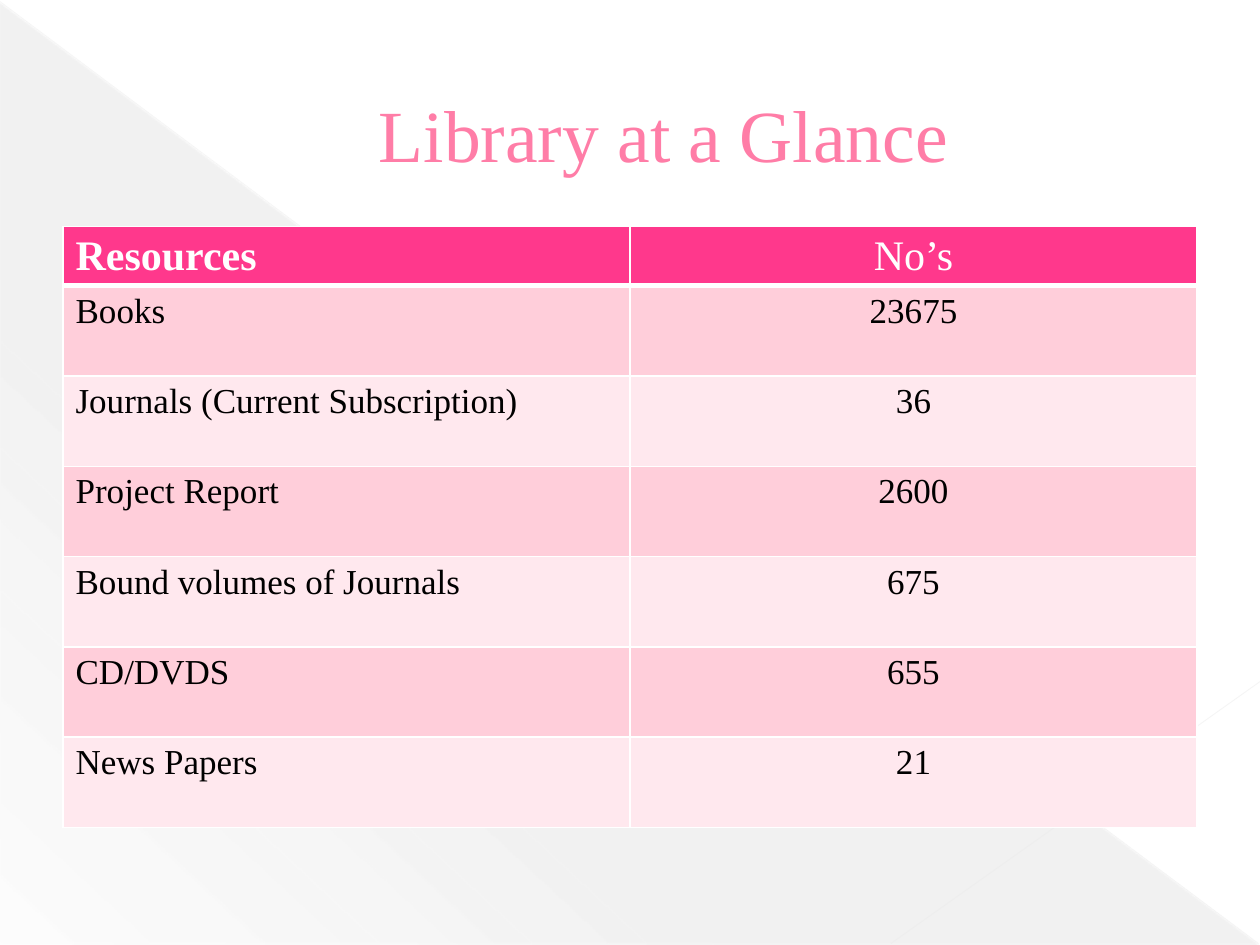
import pptx
import pptx.util
import pptx.dml.color
import pptx.enum.shapes
import pptx.enum.text
import pptx.oxml
import pptx.oxml.ns
from dataclasses import dataclass

Cm, Pt = pptx.util.Cm, pptx.util.Pt
RGB = pptx.dml.color.RGBColor.from_string
ALIGN = pptx.enum.text.PP_ALIGN
NS = pptx.oxml.ns.nsdecls("a")


@dataclass(frozen=True)
class Theme:
    font: str = "Times New Roman"
    title: str = "FF7DA7"
    title_edge: str = "B12761"
    header: str = "FF388C"
    bands: tuple = ("FFCEDA", "FFE8EE")
    white: str = "FFFFFF"
    text: str = "000000"
    shade: str = "666666"
    title_size: int = 42
    header_size: int = 24
    body_size: int = 20


T = Theme()
ROWS = [
    ("Resources", "No’s"),
    ("Books", "23675"),
    ("Journals (Current Subscription)", "36"),
    ("Project Report", "2600"),
    ("Bound volumes of Journals", "675"),
    ("CD/DVDS", "655"),
    ("News Papers", "21"),
]


def line_xml(tag, color, width, alpha=100):
    return pptx.oxml.parse_xml(
        f'<a:{tag} {NS} w="{int(Pt(width))}"><a:solidFill><a:srgbClr val="{color}">'
        f'<a:alpha val="{alpha * 1000}"/></a:srgbClr></a:solidFill></a:{tag}>')


def add_line(s, x1, y1, x2, y2, color, width, alpha):
    line = s.shapes.add_connector(
        pptx.enum.shapes.MSO_CONNECTOR.STRAIGHT, Cm(x1), Cm(y1), Cm(x2), Cm(y2))
    spPr = line._element.spPr
    spPr.append(line_xml("ln", color, width, alpha))
    spPr.append(pptx.oxml.parse_xml(f"<a:effectLst {NS}/>"))


def add_backdrop(s, x, y, w, h):
    # Fading triangle over the lower left half
    sp = s.shapes.add_shape(pptx.enum.shapes.MSO_SHAPE.RIGHT_TRIANGLE,
                            Cm(x), Cm(y + 0.05), Cm(w - 0.03), Cm(h - 0.05))
    sp.shadow.inherit = False
    sp.line.fill.background()
    stops = "".join(
        f'<a:gs pos="{pos * 1000}"><a:srgbClr val="{T.shade}">'
        f'<a:alpha val="{alpha * 1000}"/></a:srgbClr></a:gs>'
        for pos, alpha in ((0, 10), (70, 8), (100, 1)))
    geometry = sp._element.spPr.find(pptx.oxml.ns.qn("a:prstGeom"))
    geometry.addnext(pptx.oxml.parse_xml(
        f'<a:gradFill {NS} rotWithShape="1"><a:gsLst>{stops}</a:gsLst>'
        f'<a:lin ang="{133 * 60000}" scaled="0"/></a:gradFill>'))

    # Hairlines along the slope and across the lower right corner
    add_line(s, x, y + 0.03, x + w - 0.03, y + h - 0.03, "E8E8E8", 0.39, 35)
    add_line(s, x + w, y + 13.74, x + w - 7.44, y + h - 0.03, "EAEAEA", 0.47, 45)


def add_title(s, x, y, w, h):
    sp = s.shapes.title
    s.shapes._spTree.append(sp._element)  # in front of the backdrop
    sp.left, sp.top, sp.width, sp.height = Cm(x), Cm(y), Cm(w), Cm(h)
    tf = sp.text_frame
    tf.word_wrap = True
    tf.vertical_anchor = pptx.enum.text.MSO_ANCHOR.MIDDLE
    p = tf.paragraphs[0]
    p.alignment = ALIGN.CENTER
    pPr = p._p.get_or_add_pPr()
    pPr.set("marL", str(int(Cm(1.35))))
    pPr.set("indent", "0")
    r = p.add_run()
    r.text = "Library at a Glance"
    r.font.name, r.font.size = T.font, Pt(T.title_size)
    r.font.color.rgb = RGB(T.title)
    r._r.get_or_add_rPr().insert(0, line_xml("ln", T.title_edge, 0.5))


def format_cell(cell, text, row, col):
    is_header = row == 0
    cell.text = text
    p = cell.text_frame.paragraphs[0]
    p.alignment = ALIGN.CENTER if col else ALIGN.LEFT
    p.font.name = T.font
    p.font.size = Pt(T.header_size if is_header else T.body_size)
    p.font.bold = is_header and col == 0
    p.font.color.rgb = RGB(T.white if is_header else T.text)

    # White grid, heavier under the header
    widths = {"lnL": 1, "lnR": 1, "lnT": 3 if row == 1 else 1,
              "lnB": 3 if is_header else 1}
    tcPr = cell._tc.get_or_add_tcPr()
    for tag, width in widths.items():
        tcPr.append(line_xml(tag, T.white, width))
    cell.fill.solid()
    cell.fill.fore_color.rgb = RGB(T.header if is_header else T.bands[(row - 1) % 2])


def add_resources(s, x, y, w, header_h, row_h):
    h = header_h + row_h * (len(ROWS) - 1)
    table = s.shapes.add_table(len(ROWS), 2, Cm(x), Cm(y), Cm(w), Cm(h)).table
    for column in table.columns:
        column.width = Cm(w / 2)
    for i, values in enumerate(ROWS):
        table.rows[i].height = Cm(row_h if i else header_h)
        for j, text in enumerate(values):
            format_cell(table.cell(i, j), text, i, j)


def main():
    prs = pptx.Presentation()
    prs.slide_width, prs.slide_height = Cm(25.4), Cm(19.05)
    s = prs.slides.add_slide(prs.slide_layouts[5])
    s.background.fill.solid()
    s.background.fill.fore_color.rgb = RGB(T.white)
    add_backdrop(s, 0, 0, 25.4, 19.05)
    add_title(s, 1.27, 0.74, 22.86, 3.89)
    add_resources(s, 1.27, 4.57, 22.86, 1.19, 1.82)
    prs.save("out.pptx")


if __name__ == "__main__":
    main()
